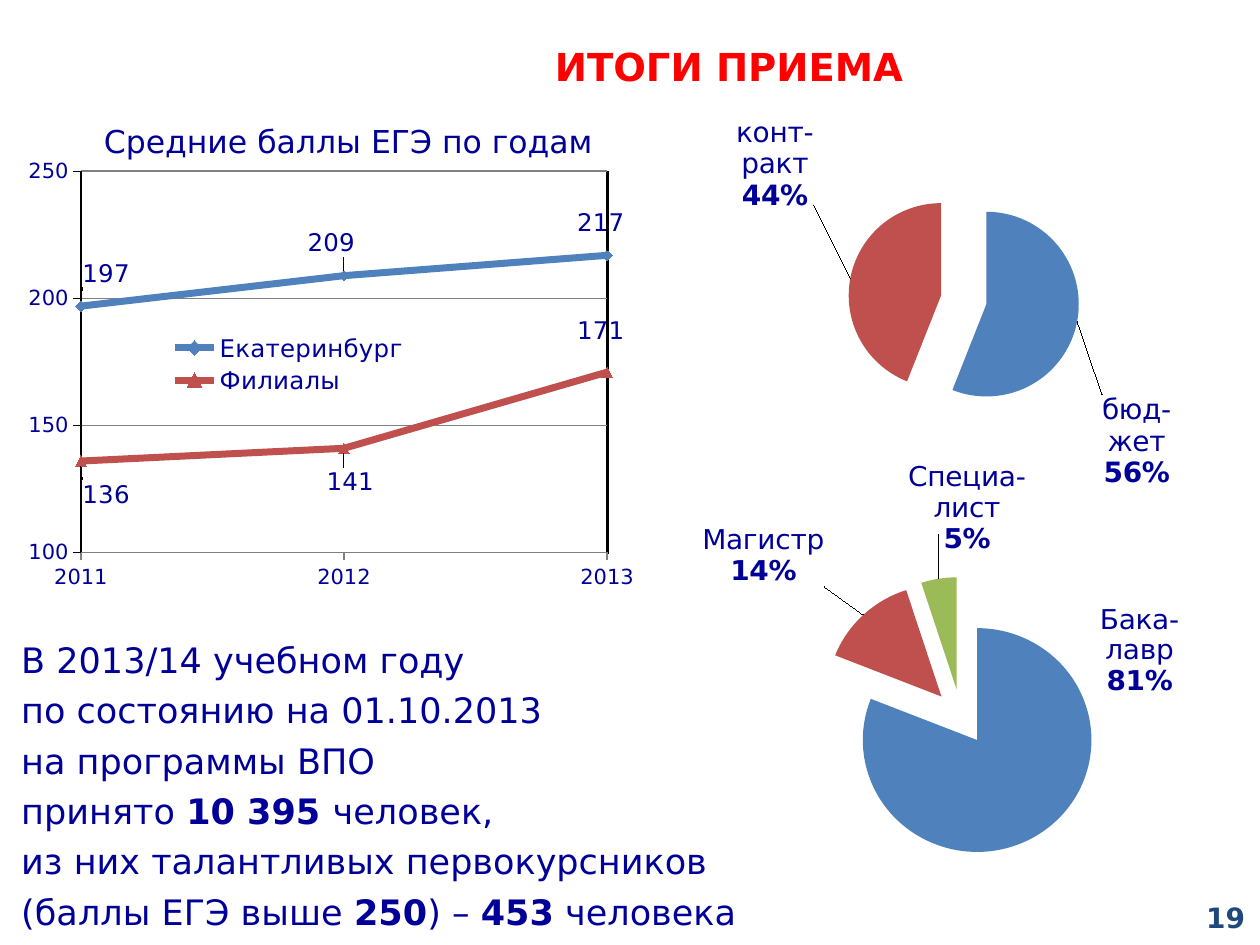
from lxml.etree import SubElement
from pptx import Presentation
from pptx.chart.data import CategoryChartData, XyChartData
from pptx.dml.color import RGBColor
from pptx.enum.chart import XL_CHART_TYPE, XL_LABEL_POSITION, XL_LEGEND_POSITION, XL_MARKER_STYLE, XL_TICK_MARK
from pptx.enum.shapes import MSO_CONNECTOR
from pptx.enum.text import MSO_ANCHOR, PP_ALIGN
from pptx.oxml import parse_xml
from pptx.oxml.ns import nsdecls, qn
from pptx.util import Inches, Pt

NAVY, RED, BLUE, BRICK, GREEN, GRAY = "000099", "FF0000", "4F81BD", "C0504D", "9BBB59", "808080"


def color(value):
    return RGBColor.from_string(value)


def layout_element(x, y, width=None, height=None, inner=False):
    """Manual chart layout in fractions; without a size it is an offset."""
    tags = [("layoutTarget", "inner")] if inner else []
    if width is not None:
        tags += [("xMode", "edge"), ("yMode", "edge")]
    tags += [("x", x), ("y", y)]
    if width is not None:
        tags += [("w", width), ("h", height)]
    body = "".join(f'<c:{tag} val="{value}"/>' for tag, value in tags)
    return parse_xml(f'<c:layout {nsdecls("c")}><c:manualLayout>{body}</c:manualLayout></c:layout>')


def set_plot_layout(chart, box):
    plot_area = chart._chartSpace.chart.plotArea
    for layout in plot_area.findall(qn("c:layout")):
        plot_area.remove(layout)
    plot_area.insert(0, layout_element(*box, inner=True))


class SlideBuilder:
    font_name = "DejaVu Sans"

    def __init__(self, slide):
        self.slide = slide

    def style(self, font, size, text_color=NAVY, bold=False):
        font.name, font.size, font.bold = self.font_name, Pt(size), bold
        font.color.rgb = color(text_color)

    def text(self, box, paragraphs, size, text_color=NAVY, bold=False, align=PP_ALIGN.LEFT,
             anchor=MSO_ANCHOR.MIDDLE, wrap=True, spacing=None):
        """Each paragraph is a list of (text, bold) runs; None is a line break."""
        frame = self.slide.shapes.add_textbox(*map(Inches, box)).text_frame
        frame.word_wrap, frame.vertical_anchor = wrap, anchor
        for index, runs in enumerate(paragraphs):
            paragraph = frame.add_paragraph() if index else frame.paragraphs[0]
            paragraph.alignment, paragraph.line_spacing = align, spacing
            for part in runs:
                if part is None:
                    paragraph.add_line_break()
                    continue
                run = paragraph.add_run()
                run.text = part[0]
                self.style(run.font, size, text_color, bold or part[1])

    def line(self, start, end, line_color, width):
        connector = self.slide.shapes.add_connector(
            MSO_CONNECTOR.STRAIGHT, *map(Inches, start + end))
        connector.line.color.rgb, connector.line.width = color(line_color), Pt(width)
        SubElement(connector._element.spPr, qn("a:effectLst"))

    def chart(self, kind, box, data, plot_box):
        chart = self.slide.shapes.add_chart(kind, *map(Inches, box), data).chart
        chart.has_title = False
        self.style(chart.font, 12)
        set_plot_layout(chart, plot_box)
        return chart

    def point_label(self, point, lines, offset, position, size):
        """A label line is (text, bold); offset is in fractions of the chart."""
        label = point.data_label
        frame = label.text_frame
        for index, (text, bold) in enumerate(lines):
            paragraph = frame.add_paragraph() if index else frame.paragraphs[0]
            run = paragraph.add_run()
            run.text = text
            self.style(run.font, size, bold=bold)
        label.position = position
        label._dLbl.find(qn("c:idx")).addnext(layout_element(*offset))

    def pie(self, box, plot_box, slices):
        """Each slice is (category, value, fill, name lines, label offset)."""
        data = CategoryChartData()
        data.categories = [item[0] for item in slices]
        data.add_series("Прием", [item[1] for item in slices])
        chart = self.chart(XL_CHART_TYPE.PIE_EXPLODED, box, data, plot_box)
        chart.has_legend = False
        series = chart.plots[0].series[0]
        for index, (_, value, fill, names, offset) in enumerate(slices):
            point = series.points[index]
            point.format.fill.solid()
            point.format.fill.fore_color.rgb = color(fill)
            lines = [(name, False) for name in names] + [(f"{value}%", True)]
            self.point_label(point, lines, offset, XL_LABEL_POSITION.OUTSIDE_END, 16)

    def smooth_scatter(self, box, plot_box, legend_box, years, lines):
        """Each line is (name, values, colour, marker, labels); a label is (offset, position)."""
        data = XyChartData()
        for name, values, *_ in lines:
            series_data = data.add_series(name)
            for year, value in zip(years, values):
                series_data.add_data_point(year, value)
        chart = self.chart(XL_CHART_TYPE.XY_SCATTER_SMOOTH, box, data, plot_box)
        chart.plots[0].vary_by_categories = False
        for series, (_, values, line_color, marker, labels) in zip(chart.plots[0].series, lines):
            series.format.line.color.rgb = color(line_color)
            series.format.line.width = Pt(4)
            series.marker.style, series.marker.size = marker, 6
            series.marker.format.fill.solid()
            series.marker.format.fill.fore_color.rgb = color(line_color)
            series.marker.format.line.color.rgb = color(line_color)
            for index, (offset, position) in enumerate(labels):
                self.point_label(series.points[index], [(str(values[index]), False)],
                                 offset, position, 14)
        axes = ((chart.category_axis, (years[0], years[-1], 1), GRAY, "General"),
                (chart.value_axis, (100, 250, 50), "000000", "0"))
        for axis, (low, high, step), line_color, number_format in axes:
            axis.minimum_scale, axis.maximum_scale, axis.major_unit = low, high, step
            axis.major_tick_mark = XL_TICK_MARK.OUTSIDE
            axis.format.line.color.rgb = color(line_color)
            axis.tick_labels.number_format = number_format
            axis.tick_labels.number_format_is_linked = False
            self.style(axis.tick_labels.font, 12)
        chart.category_axis.has_major_gridlines = False
        chart.value_axis.has_major_gridlines = True
        chart.value_axis.major_gridlines.format.line.color.rgb = color(GRAY)
        chart.has_legend = True
        legend = chart.legend
        legend.position, legend.include_in_layout = XL_LEGEND_POSITION.RIGHT, False
        self.style(legend.font, 14)
        for layout in legend._element.findall(qn("c:layout")):
            legend._element.remove(layout)
        legend._element.find(qn("c:legendPos")).addnext(layout_element(*legend_box))


def main():
    presentation = Presentation()
    presentation.slide_width, presentation.slide_height = Inches(10), Inches(7.5)
    builder = SlideBuilder(presentation.slides.add_slide(presentation.slide_layouts[6]))

    builder.text((1.77, 0.29, 8.03, 0.47), [[("ИТОГИ ПРИЕМА", True)]], 22, RED,
                 align=PP_ALIGN.CENTER)
    builder.text((7.65, 7.08, 2.33, 0.4), [[("19", True)]], 16, "1F497D", align=PP_ALIGN.RIGHT)
    builder.pie((4.69, 3.67, 5.39, 3.72), (0.22, 0.25, 0.65, 0.61), [
        ("Бакалавр", 81, BLUE, ["Бака-", "лавр"], (0.08, -0.51)),
        ("Магистр", 14, BRICK, ["Магистр"], (-0.05, -0.05)),
        ("Специалист", 5, GREEN, ["Специа-", "лист"], (0.13, -0.08)),
    ])
    builder.text((0.07, 4.95, 6.02, 2.52), [
        [("В 2013/14 учебном году", False)],
        [("по состоянию на 01.10.2013", False)],
        [("на программы ВПО", False)],
        [("принято ", False), ("10 395 ", True), ("человек,", False)],
        [("из них талантливых первокурсников ", False), None, ("(баллы ЕГЭ выше ", False),
         ("250", True), (") – ", False), ("453", True), (" человека", False)],
    ], 20, anchor=MSO_ANCHOR.TOP, wrap=False, spacing=1.2)
    builder.text((0.64, 0.92, 4.25, 0.4), [[("Средние баллы ЕГЭ по годам", False)]], 18,
                 align=PP_ALIGN.CENTER)

    builder.line((0.64, 1.36), (4.82, 1.36), GRAY, 1)
    builder.line((4.82, 1.36), (4.82, 4.4), "000000", 2)
    above, below = XL_LABEL_POSITION.ABOVE, XL_LABEL_POSITION.BELOW
    builder.smooth_scatter(
        (0.11, 1.26, 5.02, 3.42), (0.106, 0.03, 0.832, 0.89), (0.25, 0.4, 0.37, 0.16),
        (2011, 2012, 2013), [
            ("Екатеринбург", (197, 209, 217), BLUE, XL_MARKER_STYLE.DIAMOND,
             [((0.04, -0.02), above), ((-0.02, -0.02), above), ((-0.01, -0.02), above)]),
            ("Филиалы", (136, 141, 171), BRICK, XL_MARKER_STYLE.TRIANGLE,
             [((0.04, 0.02), below), ((0.01, 0.02), below), ((-0.01, -0.04), above)]),
        ])
    builder.pie((5.31, 0.93, 4.67, 3), (0.184, 0.178, 0.634, 0.611), [
        ("бюджет", 56, BLUE, ["бюд-", "жет"], (0.03, 0.19)),
        ("контракт", 44, BRICK, ["конт-", "ракт"], (-0.05, -0.19)),
    ])
    presentation.save("out.pptx")


if __name__ == "__main__":
    main()
